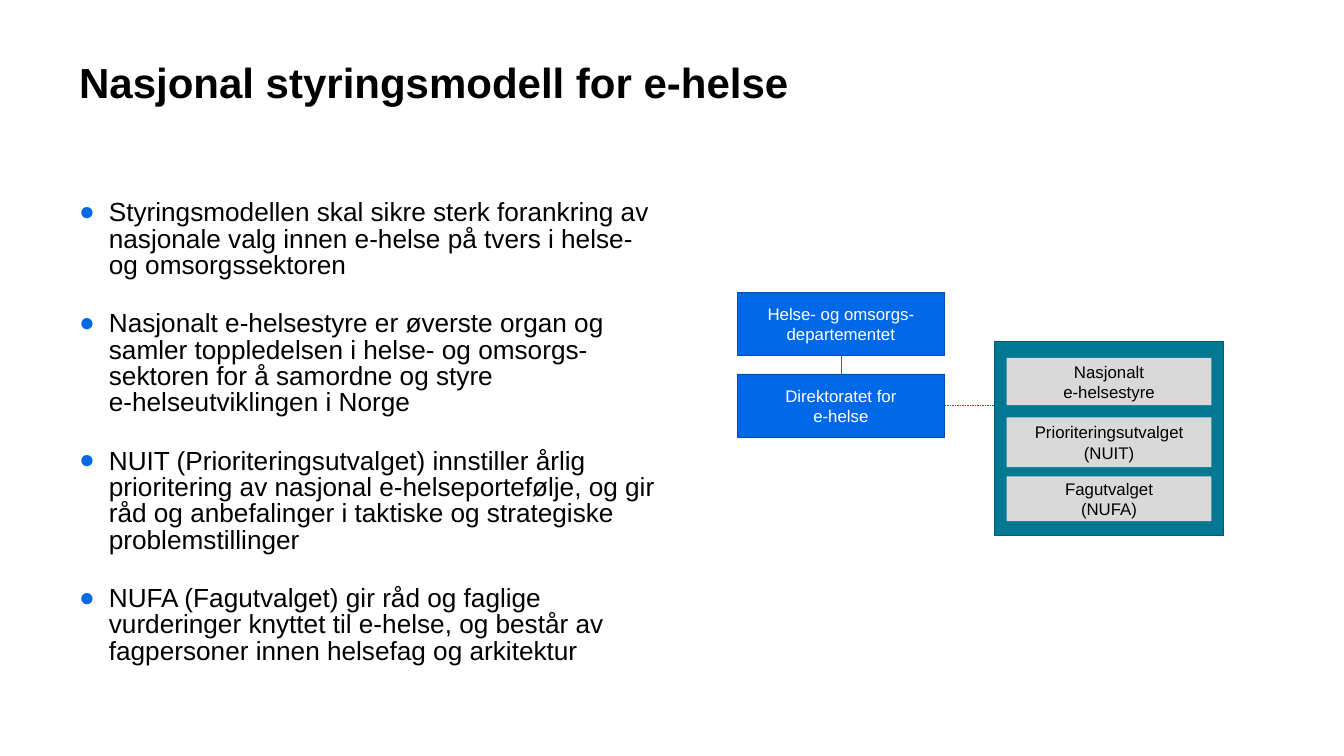
from dataclasses import dataclass
from typing import Optional

from lxml.etree import SubElement
from pptx import Presentation
from pptx.dml.color import RGBColor as Rgb
from pptx.enum.dml import MSO_LINE as Dash
from pptx.enum.shapes import MSO_CONNECTOR as Link, MSO_SHAPE as Form
from pptx.enum.text import MSO_ANCHOR as Anchor, MSO_AUTO_SIZE as Fit, PP_ALIGN as Align
from pptx.oxml.ns import qn
from pptx.util import Pt


@dataclass(frozen=True)
class Theme:
    font: str = "Arial"
    black: str = "000000"
    white: str = "FFFFFF"
    blue: str = "0169E8"
    navy: str = "014EAC"
    teal: str = "027993"
    pine: str = "015A6D"
    gray: str = "D9D9D9"
    link: str = "0069E8"
    title: float = 60
    body: float = 37.4
    label: float = 24


@dataclass(frozen=True)
class Box:
    left: float
    top: float
    width: float
    height: float
    fill: str
    edge: Optional[str] = None
    text: str = ""
    ink: str = Theme.black


THEME = Theme()
INDENT = 42.5
POINTS = (
    "Styringsmodellen skal sikre sterk forankring av nasjonale valg innen e-helse "
    "på tvers i helse- og omsorgssektoren",
    "Nasjonalt e-helsestyre er øverste organ og samler toppledelsen i helse- og "
    "omsorgs-sektoren for å samordne og styre\ve-helseutviklingen i Norge",
    "NUIT (Prioriteringsutvalget) innstiller årlig prioritering av nasjonal "
    "e-helseportefølje, og gir råd og anbefalinger i taktiske og strategiske "
    "problemstillinger",
    "NUFA (Fagutvalget) gir råd og faglige vurderinger knyttet til e-helse, og "
    "består av fagpersoner innen helsefag og arkitektur",
)
OWNERS = [
    Box(1052.6, top, 296.6, 90, THEME.blue, THEME.navy, text, THEME.white)
    for top, text in (
        (417.6, "Helse- og omsorgs-departementet"),
        (534.2, "Direktoratet for\ne-helse"),
    )
]
PANEL = Box(1420.6, 487.4, 326.9, 277.9, THEME.teal, THEME.pine)
BOARDS = [
    Box(1437.8, top, 292.3, height, THEME.gray, text=text)
    for top, height, text in (
        (511.2, 67.7, "Nasjonalt\ne-helsestyre"),
        (596.2, 71.3, "Prioriteringsutvalget\n(NUIT)"),
        (680.4, 64.1, "Fagutvalget\n(NUFA)"),
    )
]


def style(para, size: float, ink: str, bold: bool = False) -> None:
    for run in para.runs:
        font = run.font
        font.name, font.size, font.bold = THEME.font, Pt(size), bold
        font.color.rgb = Rgb.from_string(ink)


def place(holder, left: float, top: float, width: float, height: float):
    """Move a placeholder, clear its insets and return its text frame."""
    holder.left, holder.top = Pt(left), Pt(top)
    holder.width, holder.height = Pt(width), Pt(height)
    frame = holder.text_frame
    frame.auto_size, frame.word_wrap = Fit.NONE, True
    frame.margin_left = frame.margin_right = Pt(0)
    frame.margin_top = frame.margin_bottom = Pt(0)
    return frame


def bullet(para) -> None:
    props = para._p.get_or_add_pPr()
    props.set("marL", str(Pt(INDENT)))
    props.set("indent", str(-Pt(INDENT)))
    color = SubElement(props, qn("a:buClr"))
    SubElement(color, qn("a:srgbClr"), val=THEME.blue)
    SubElement(props, qn("a:buFont"), typeface=THEME.font)
    SubElement(props, qn("a:buChar"), char="●")


def add_title(slide) -> None:
    frame = place(slide.shapes.title, 113, 55.4, 1698.5, 131.8)
    frame.text = "Nasjonal styringsmodell for e-helse"
    frame.vertical_anchor = Anchor.MIDDLE
    para = frame.paragraphs[0]
    para.alignment, para.line_spacing = Align.LEFT, 0.9
    style(para, THEME.title, THEME.black, bold=True)


def add_list(slide) -> None:
    frame = place(slide.placeholders[1], 113, 286.6, 830.9, 681.8)
    frame.vertical_anchor = Anchor.TOP
    for i, text in enumerate(POINTS):
        para = frame.add_paragraph() if i else frame.paragraphs[0]
        para.text = text
        bullet(para)
        para.alignment, para.line_spacing = Align.LEFT, 0.84
        para.space_before = Pt(45.5 if i else 0)
        style(para, THEME.body, THEME.black)


def add_box(slide, box: Box):
    shape = slide.shapes.add_shape(
        Form.RECTANGLE, Pt(box.left), Pt(box.top), Pt(box.width), Pt(box.height))
    shape.shadow.inherit = False
    shape.fill.solid()
    shape.fill.fore_color.rgb = Rgb.from_string(box.fill)
    if box.edge:
        shape.line.color.rgb = Rgb.from_string(box.edge)
        shape.line.width = Pt(1)
    else:
        shape.line.fill.background()
    if box.text:
        frame = shape.text_frame
        frame.text = box.text
        frame.word_wrap, frame.vertical_anchor = True, Anchor.MIDDLE
        frame.margin_left = frame.margin_right = Pt(18.7)
        frame.margin_top = frame.margin_bottom = Pt(9.4)
        for para in frame.paragraphs:
            para.alignment = Align.CENTER
            style(para, THEME.label, box.ink)
    return shape


def add_line(slide, x1: float, y1: float, x2: float, y2: float):
    line = slide.shapes.add_connector(Link.STRAIGHT, Pt(x1), Pt(y1), Pt(x2), Pt(y2))
    line.line.color.rgb = Rgb.from_string(THEME.link)
    line.line.width = Pt(0.5)
    SubElement(line._element.spPr, qn("a:effectLst"))
    return line


def add_chart(slide) -> None:
    """Draw the organisation boxes and the lines between them."""
    upper, lower = OWNERS
    ministry, agency = [add_box(slide, box) for box in OWNERS]
    mid = upper.left + upper.width / 2
    stem = add_line(slide, mid, upper.top + upper.height, mid, lower.top)
    stem.begin_connect(ministry, 2)
    stem.end_connect(agency, 0)

    level = lower.top + lower.height / 2
    branch = add_line(slide, lower.left + lower.width, level, 1478.9, level)
    branch.line.dash_style = Dash.DASH
    branch.begin_connect(agency, 3)

    for box in (PANEL, *BOARDS):
        add_box(slide, box)


def main() -> None:
    deck = Presentation()
    deck.slide_width, deck.slide_height = Pt(1919.5), Pt(1080)
    slide = deck.slides.add_slide(deck.slide_layouts[1])
    add_title(slide)
    add_list(slide)
    add_chart(slide)
    deck.save("out.pptx")


if __name__ == "__main__":
    main()
